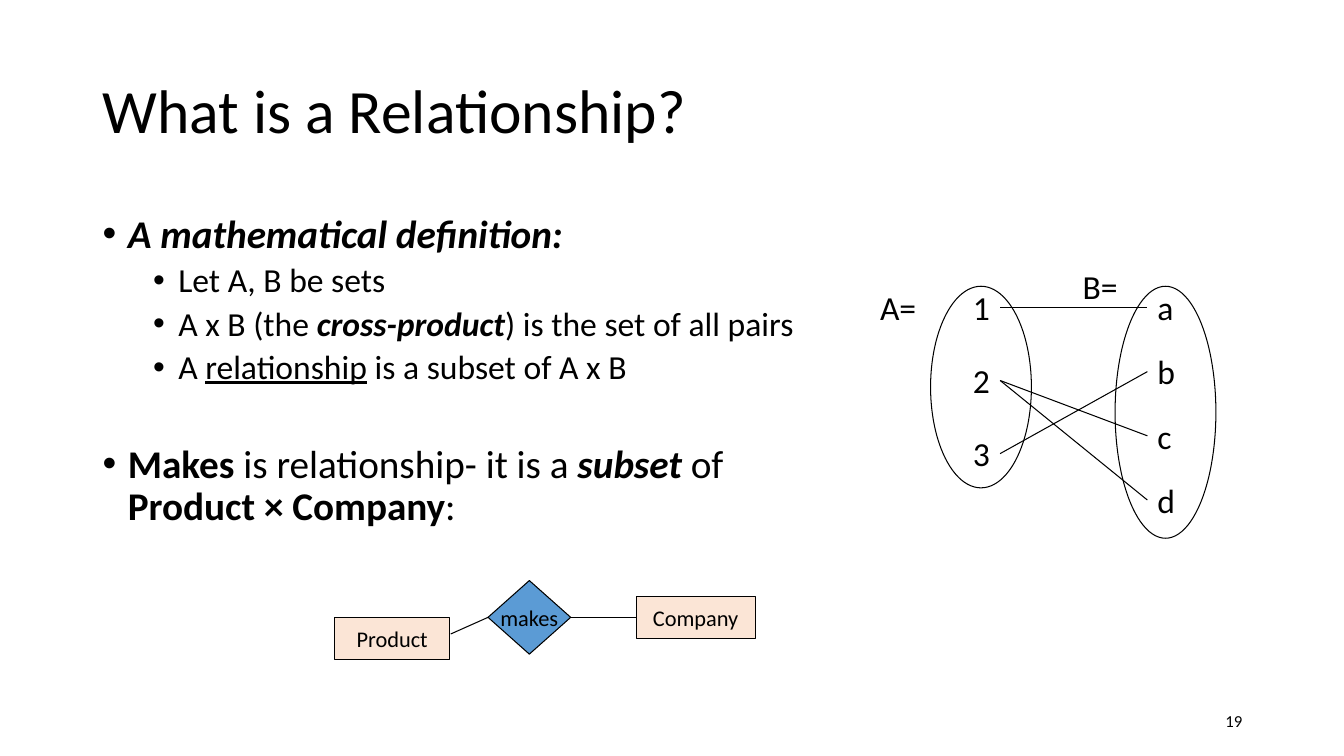
from dataclasses import dataclass

import pptx
import pptx.dml.color
import pptx.enum.shapes
import pptx.enum.text
import pptx.oxml
import pptx.oxml.ns
import pptx.util
from pptx.util import Inches

BLACK = pptx.dml.color.RGBColor(0x00, 0x00, 0x00)
BLUE = pptx.dml.color.RGBColor(0x5B, 0x9B, 0xD5)
PEACH = pptx.dml.color.RGBColor(0xFB, 0xE5, 0xD6)
FONT = "Calibri"
ALIGN = pptx.enum.text.PP_ALIGN
ANCHOR = pptx.enum.text.MSO_ANCHOR
AUTO_SIZE = pptx.enum.text.MSO_AUTO_SIZE
SHAPE = pptx.enum.shapes.MSO_SHAPE


@dataclass
class Span:
    text: str
    bold: bool = False
    italic: bool = False
    underline: bool = False


@dataclass
class Bullet:
    spans: list[Span]
    level: int = 0
    space_before: float = 10


@dataclass
class Box:
    left: float
    top: float
    width: float
    height: float

    def lengths(self) -> list[int]:
        return [Inches(value) for value in (self.left, self.top, self.width, self.height)]


@dataclass
class Entity:
    text: str
    kind: int
    box: Box
    fill: pptx.dml.color.RGBColor


@dataclass
class ElementSet:
    label: str
    label_left: float
    label_top: float
    members: str
    member_left: float
    step: float
    ellipse: Box

    def member_top(self, index: int) -> float:
        return MEMBER_TOP + index * self.step


MEMBER_TOP = 2.8
MEMBER_WIDTH, MEMBER_HEIGHT = 0.37, 0.5
SET_A = ElementSet("A=", 8.63, 2.8, "123", 9.55, 0.725, Box(9.23, 2.84, 1, 2))
SET_B = ElementSet("B=", 10.64, 2.59, "abcd", 11.38, 0.637, Box(11.06, 2.84, 1, 2.5))
PAIRS = ["1a", "2c", "2d", "3b"]

BULLETS = [
    Bullet([Span("A mathematical definition:", bold=True, italic=True)]),
    Bullet([Span("Let A, B be sets")], 1, 5),
    Bullet([Span("A x B (the "), Span("cross-product", bold=True, italic=True),
            Span(") is the set of all pairs")], 1, 5),
    Bullet([Span("A "), Span("relationship", underline=True),
            Span(" is a subset of A x B")], 1, 5),
    Bullet([Span("Makes ", bold=True), Span("is relationship- it is a "),
            Span("subset", bold=True, italic=True), Span(" of "),
            Span("Product × Company", bold=True), Span(":")], space_before=41),
]

MAKES = Entity("makes", SHAPE.DIAMOND, Box(4.84, 5.76, 0.82, 0.73), BLUE)
COMPANY = Entity("Company", SHAPE.RECTANGLE, Box(6.31, 5.92, 1.18, 0.41), PEACH)
PRODUCT = Entity("Product", SHAPE.RECTANGLE, Box(3.32, 6.13, 1.14, 0.41), PEACH)


def add_run(paragraph, span: Span, size: float) -> None:
    run = paragraph.add_run()
    run.text = span.text
    font = run.font
    font.name, font.size = FONT, pptx.util.Pt(size)
    font.bold, font.italic, font.underline = span.bold, span.italic, span.underline
    font.color.rgb = BLACK


def add_text(slide, text: str, box: Box, size: float = 24):
    shape = slide.shapes.add_textbox(*box.lengths())
    shape.text_frame.word_wrap = False
    add_run(shape.text_frame.paragraphs[0], Span(text), size)
    return shape


def outline(shape) -> None:
    shape.line.color.rgb = BLACK
    shape.line.width = pptx.util.Pt(0.75)


def add_line(slide, start: tuple[float, float], end: tuple[float, float]):
    points = [Inches(value) for value in (*start, *end)]
    line = slide.shapes.add_connector(pptx.enum.shapes.MSO_CONNECTOR.STRAIGHT, *points)
    outline(line)
    line._element.spPr.append(pptx.oxml.parse_xml(
        f"<a:effectLst {pptx.oxml.ns.nsdecls('a')}/>"))
    return line


def add_title(slide) -> None:
    title = slide.shapes.title
    title.left, title.top, title.width, title.height = Box(0.92, 0.4, 11.5, 1.45).lengths()
    frame = title.text_frame
    frame.auto_size = AUTO_SIZE.NONE
    frame.vertical_anchor = ANCHOR.MIDDLE
    paragraph = frame.paragraphs[0]
    paragraph.alignment = ALIGN.LEFT
    paragraph.line_spacing = 0.9
    add_run(paragraph, Span("What is a Relationship?"), 44)


def add_bullets(slide) -> None:
    frame = slide.shapes.add_textbox(*Box(0.92, 2.08, 7.6, 4.89).lengths()).text_frame
    frame.word_wrap = True
    for index, bullet in enumerate(BULLETS):
        paragraph = frame.add_paragraph() if index else frame.paragraphs[0]
        paragraph.level = bullet.level
        paragraph.line_spacing = 0.9
        paragraph.space_before = pptx.util.Pt(bullet.space_before)
        properties = paragraph._p.get_or_add_pPr()
        properties.set("marL", str(Inches(0.25 + 0.5 * bullet.level)))
        properties.set("indent", str(Inches(-0.25)))
        for tag in ('buFont typeface="Arial"', 'buChar char="•"'):
            name, attribute = tag.split()
            properties.append(pptx.oxml.parse_xml(
                f"<a:{name} {pptx.oxml.ns.nsdecls('a')} {attribute}/>"))
        for span in bullet.spans:
            add_run(paragraph, span, 28 - 4 * bullet.level)


def add_set(slide, element_set: ElementSet) -> None:
    for index, member in enumerate(element_set.members):
        add_text(slide, member, Box(element_set.member_left, element_set.member_top(index),
                                    MEMBER_WIDTH, MEMBER_HEIGHT))
    ellipse = slide.shapes.add_shape(SHAPE.OVAL, *element_set.ellipse.lengths())
    ellipse.shadow.inherit = False
    ellipse.fill.background()
    outline(ellipse)
    add_text(slide, element_set.label,
             Box(element_set.label_left, element_set.label_top, 0.62, MEMBER_HEIGHT))


def add_pair(slide, pair: str) -> None:
    """Join a member of A to a member of B."""
    start_y, end_y = (
        element_set.member_top(element_set.members.index(member)) + MEMBER_HEIGHT / 2
        for element_set, member in zip((SET_A, SET_B), pair))
    add_line(slide, (SET_A.member_left + MEMBER_WIDTH, start_y), (SET_B.member_left, end_y))


def add_entity(slide, entity: Entity):
    shape = slide.shapes.add_shape(entity.kind, *entity.box.lengths())
    shape.shadow.inherit = False
    shape.fill.solid()
    shape.fill.fore_color.rgb = entity.fill
    outline(shape)
    frame = shape.text_frame
    frame.word_wrap = False
    frame.vertical_anchor = ANCHOR.MIDDLE
    frame.paragraphs[0].alignment = ALIGN.CENTER
    add_run(frame.paragraphs[0], Span(entity.text), 16)
    return shape


def main() -> None:
    presentation = pptx.Presentation()
    presentation.slide_width, presentation.slide_height = Inches(13.33), Inches(7.5)
    slide = presentation.slides.add_slide(presentation.slide_layouts.get_by_name("Title Only"))
    add_title(slide)
    add_bullets(slide)
    for element_set in (SET_A, SET_B):
        add_set(slide, element_set)
    for pair in PAIRS:
        add_pair(slide, pair)

    makes, company, _ = [add_entity(slide, entity) for entity in (MAKES, COMPANY, PRODUCT)]
    to_company = add_line(slide, (5.66, 6.13), (6.31, 6.13))
    to_company.begin_connect(makes, 3)
    to_company.end_connect(company, 1)
    to_product = add_line(slide, (4.84, 6.13), (4.47, 6.29))
    to_product.begin_connect(makes, 1)

    number = add_text(slide, "19", Box(9.42, 6.95, 3, 0.4), 12)
    number.text_frame.word_wrap = True
    number.text_frame.vertical_anchor = ANCHOR.MIDDLE
    number.text_frame.paragraphs[0].alignment = ALIGN.RIGHT
    presentation.save("out.pptx")


if __name__ == "__main__":
    main()
